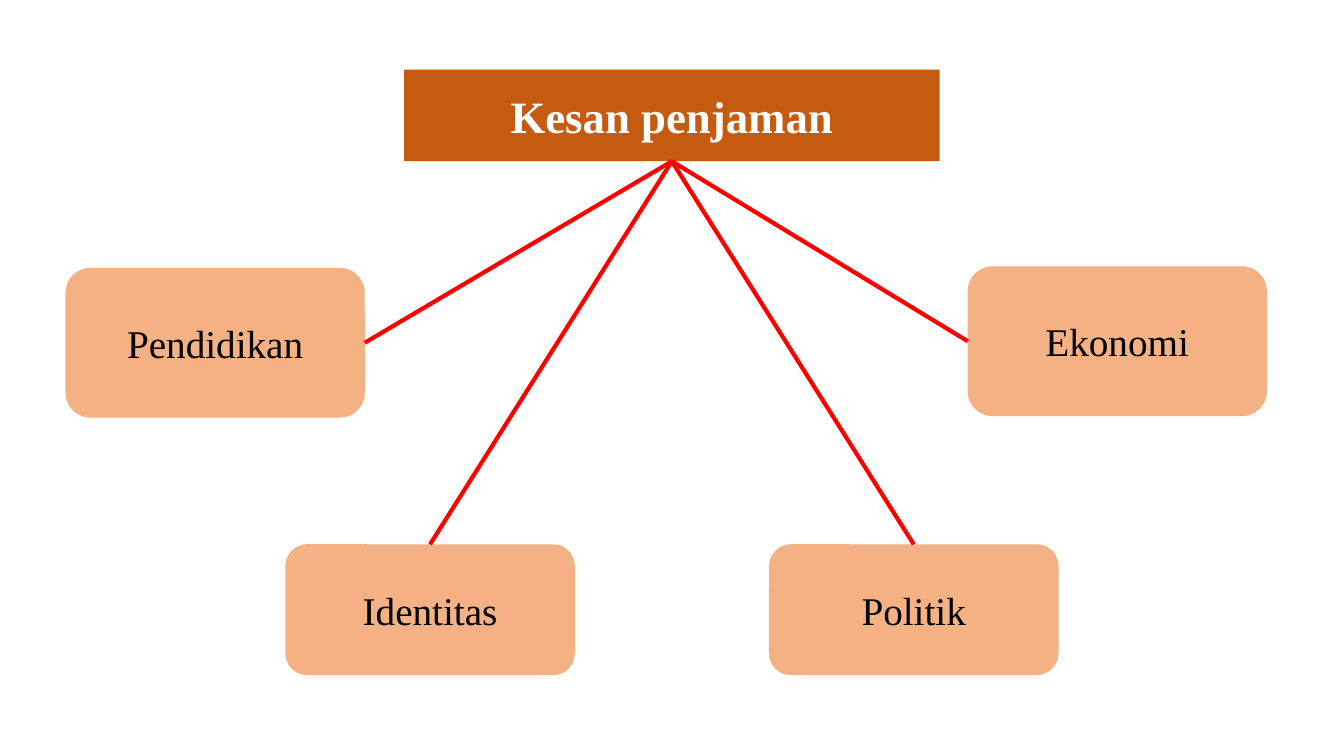
import pptx
import pptx.dml.color
import pptx.enum.shapes
import pptx.enum.text
import pptx.oxml
import pptx.oxml.ns
import pptx.util

Pt = pptx.util.Pt
Shape = pptx.enum.shapes.MSO_SHAPE
TOP, LEFT, BOTTOM, RIGHT = range(4)

TITLE_FORMAT = {"name": "Times New Roman", "size": Pt(32), "bold": True}
EFFECT_FORMAT = {"name": "Times New Roman", "size": Pt(28), "bold": False}

# text, left, top, width, height, side that meets the line
EFFECTS = [
    ("Pendidikan", 46.8, 191.3, 213.8, 107, RIGHT),
    ("Identitas", 203.8, 388.8, 206.8, 93.5, TOP),
    ("Politik", 549.3, 388.8, 206.8, 93.5, TOP),
    ("Ekonomi", 691.2, 190.2, 213.8, 107, LEFT),
]


def color(hex_value):
    return pptx.dml.color.RGBColor.from_string(hex_value)


def add_box(slide, kind, text, bounds, fill, text_color, font_format):
    shape = slide.shapes.add_shape(kind, *map(Pt, bounds))
    shape.shadow.inherit = False
    shape.fill.solid()
    shape.fill.fore_color.rgb = color(fill)
    shape.line.fill.background()
    frame = shape.text_frame
    frame.word_wrap = True
    frame.vertical_anchor = pptx.enum.text.MSO_ANCHOR.MIDDLE
    paragraph = frame.paragraphs[0]
    paragraph.alignment = pptx.enum.text.PP_ALIGN.CENTER
    run = paragraph.add_run()
    run.text = text
    for name, value in font_format.items():
        setattr(run.font, name, value)
    run.font.color.rgb = color(text_color)
    return shape


def join(slide, start, start_side, end, end_side):
    """Draw a red line between the middles of two box sides."""
    connector = slide.shapes.add_connector(
        pptx.enum.shapes.MSO_CONNECTOR.STRAIGHT, 0, 0, 0, 0)
    connector.begin_connect(start, start_side)
    connector.end_connect(end, end_side)
    connector.line.color.rgb = color("FF0000")
    connector.line.width = Pt(3)
    properties = connector.element.spPr
    properties.append(pptx.oxml.parse_xml(
        "<a:effectLst %s/>" % pptx.oxml.ns.nsdecls("a")))


def main():
    presentation = pptx.Presentation()
    presentation.slide_width = Pt(960)
    presentation.slide_height = Pt(540)
    slide = presentation.slides.add_slide(presentation.slide_layouts[6])

    title = add_box(slide, Shape.RECTANGLE, "Kesan penjaman",
                    (288.7, 49.7, 382.5, 65.5), "C55A11", "FFFFFF", TITLE_FORMAT)
    for text, *bounds, side in EFFECTS:
        effect = add_box(slide, Shape.ROUNDED_RECTANGLE, text, bounds,
                         "F4B183", "000000", EFFECT_FORMAT)
        join(slide, title, BOTTOM, effect, side)

    presentation.save("out.pptx")


if __name__ == "__main__":
    main()
